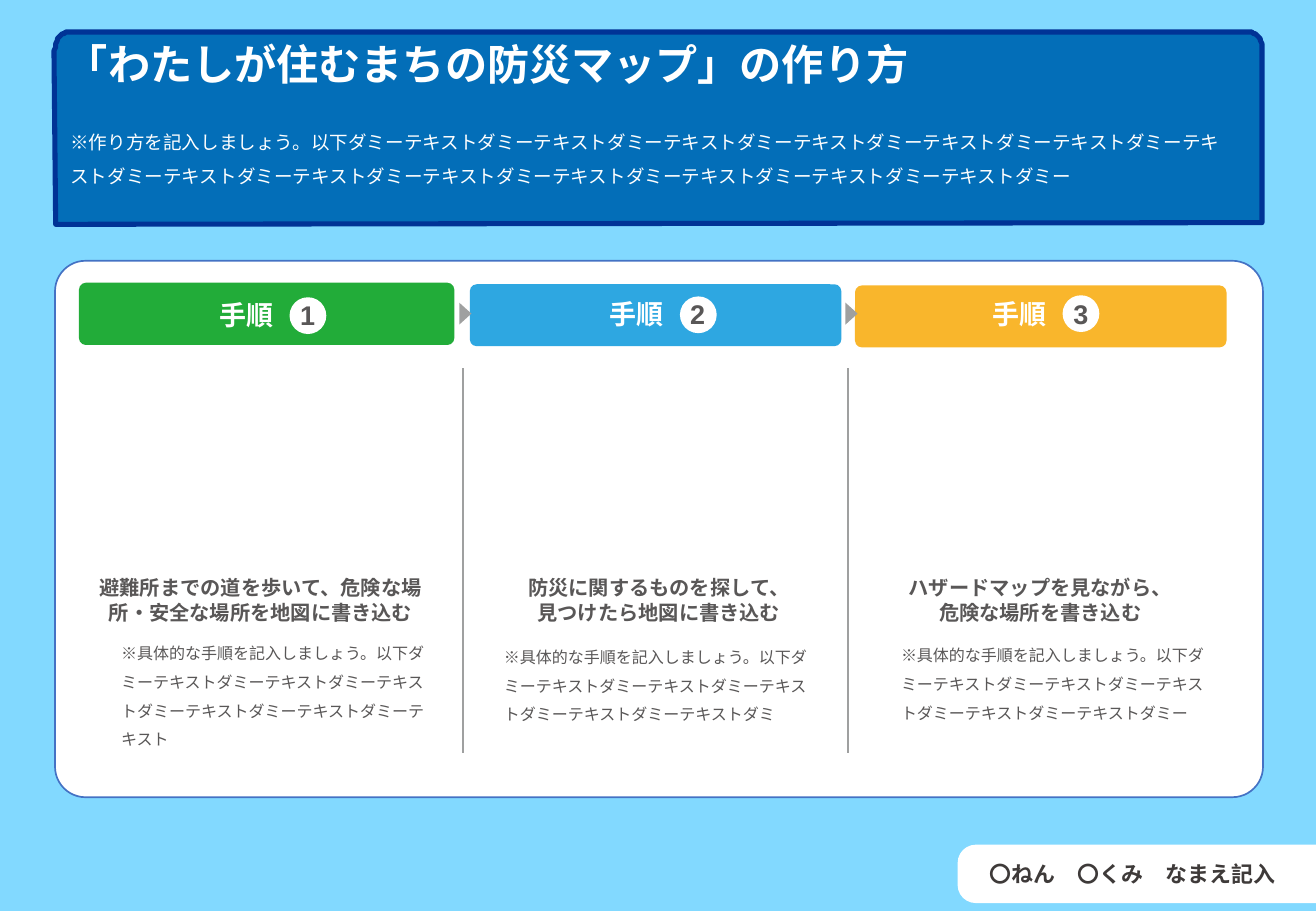
from math import cos, pi, sin
from lxml.etree import SubElement
from pptx import Presentation
from pptx.dml.color import RGBColor
from pptx.enum.shapes import MSO_CONNECTOR, MSO_SHAPE
from pptx.enum.text import MSO_ANCHOR, PP_ALIGN
from pptx.oxml.ns import qn
from pptx.util import Pt

# Content
DUMMY = "ダミーテキスト"
TITLE = "「わたしが住むまちの防災マップ」の作り方"
INTRO = "※作り方を記入しましょう。以下" + DUMMY * 14 + "ダミー"
NAME_LINE = "〇ねん　〇くみ　なまえ記入"
STEP_LABEL = "手順　"
STEP_INTRO = "※具体的な手順を記入しましょう。以下"
# Boxes are (left, top, width, height)
STEPS = [
    dict(color="22AC39", bar=(46.8, 167.6, 222.5, 36.9), badge=(171.6, 176.2),
         label=(98.6, 173.5), head=(49, 337.7, 211, 36), body=(64.8, 372.2),
         heading="避難所までの道を歩いて、危険な場所・安全な場所を地図に書き込む",
         detail=STEP_INTRO + DUMMY * 6),
    dict(color="2EA7E1", bar=(278.5, 168.5, 220.2, 36.7), badge=(403, 175.7),
         label=(329.8, 172.6), head=(304.6, 337.7, 172, 36), body=(291.6, 374.4),
         heading="防災に関するものを探して、見つけたら地図に書き込む",
         detail=STEP_INTRO + DUMMY * 5 + "ダミ"),
    dict(color="F9B62C", bar=(506.8, 169.2, 220.2, 36.7), badge=(629.8, 175),
         label=(557, 172.6), head=(530.6, 337.7, 172, 36), body=(527, 373.7),
         heading="ハザードマップを見ながら、危険な場所を書き込む",
         detail=STEP_INTRO + DUMMY * 5 + "ダミー"),
]
DIVIDERS = [274.4, 502.6]
ARROWS = [269.3, 498.2]

THEME = dict(
    font="Arial", sky="82D9FF", banner="036EB8", navy="003396", white="FFFFFF",
    border="4472C4", gray="9FA0A0", text="595757", dark="3E3A39",
    title=25, step=16, name=13, heading=12, intro=11, detail=9.5,
)


def rgb(name):
    return RGBColor.from_string(THEME.get(name, name))


def paint(sp, fill, line=None, width=1):
    sp.shadow.inherit = False
    sp.fill.solid()
    sp.fill.fore_color.rgb = rgb(fill)
    if line:
        sp.line.color.rgb = rgb(line)
        sp.line.width = Pt(width)
    else:
        sp.line.fill.background()


def add_shape(s, kind, box, fill, adj=(), rotation=0, **outline):
    sp = s.shapes.add_shape(kind, *map(Pt, box))
    for i, value in enumerate(adj):
        sp.adjustments[i] = value
    sp.rotation = rotation
    paint(sp, fill, **outline)


def write(tf, runs, size, bold=False, **layout):
    tf.word_wrap = True
    p = tf.paragraphs[0]
    for key, value in ({"alignment": PP_ALIGN.LEFT} | layout).items():
        setattr(p, key, value)
    for text, color in runs:
        r = p.add_run()
        r.text = text
        fmt = dict(name=THEME["font"], size=Pt(THEME[size]), bold=bold)
        for key, value in fmt.items():
            setattr(r.font, key, value)
        r.font.color.rgb = rgb(color)


def add_text(s, box, runs, size, anchor=MSO_ANCHOR.TOP, **layout):
    tf = s.shapes.add_textbox(*map(Pt, box)).text_frame
    tf.vertical_anchor = anchor
    write(tf, runs, size, **layout)


def add_banner(s):
    left, right, top, rx, ry, n = 32.4, 748.5, 19.4, 6.5, 12.2, 10
    turns = [pi / 2 * i / n for i in range(n + 1)]
    pts = [(left + rx * (1 - cos(a)), top + ry * (1 - sin(a))) for a in turns]
    pts += [(right - rx * (1 - sin(a)), top + ry * (1 - cos(a))) for a in turns]
    pts += [(748, 132), (33, 133)]
    fb = s.shapes.build_freeform(*pts[0], scale=Pt(1))
    fb.add_line_segments(pts[1:], close=True)
    sp = fb.convert_to_shape()
    paint(sp, "banner", "navy", 3)
    sp.text_frame.vertical_anchor = MSO_ANCHOR.TOP
    write(sp.text_frame, [(TITLE, "white")], "title", bold=True)


def main():
    prs = Presentation()
    prs.slide_width, prs.slide_height = Pt(780), Pt(540)
    s = prs.slides.add_slide(prs.slide_layouts[6])
    s.background.fill.solid()
    s.background.fill.fore_color.rgb = rgb("sky")

    # Title banner
    add_banner(s)
    add_text(s, (34.6, 67.7, 702, 45.4), [(INTRO, "white")], "intro",
             line_spacing=1.5)

    # Name tab
    add_shape(s, MSO_SHAPE.ROUND_2_SAME_RECTANGLE, (656.5, 411.8, 34.6, 212.4),
              "white", adj=(0.31, 0), rotation=270)
    add_text(s, (579.6, 507.6, 200.4, 21), [(NAME_LINE, "dark")], "name",
             anchor=MSO_ANCHOR.MIDDLE, bold=True)

    # Panel
    add_shape(s, MSO_SHAPE.ROUNDED_RECTANGLE, (32.6, 154.6, 716, 318), "white",
              adj=(0.057,), line="border")

    # Steps
    for number, step in enumerate(STEPS, 1):
        add_shape(s, MSO_SHAPE.ROUNDED_RECTANGLE, step["bar"], step["color"],
                  adj=(0.111,))
        add_shape(s, MSO_SHAPE.OVAL, (*step["badge"], 21.8, 21.8), "white")
        add_text(s, (*step["label"], 119.5, 26.6),
                 [(STEP_LABEL, "white"), (str(number), "text")], "step",
                 bold=True, alignment=PP_ALIGN.CENTER)
        add_text(s, step["head"], [(step["heading"], "text")], "heading",
                 bold=True, alignment=PP_ALIGN.CENTER)
        add_text(s, (*step["body"], 196.6, 57.6), [(step["detail"], "text")],
                 "detail", line_spacing=1.5)

    # Arrows and dividers between steps
    for arrow, x in zip(ARROWS, DIVIDERS):
        add_shape(s, MSO_SHAPE.ISOSCELES_TRIANGLE, (arrow, 182.3, 13, 7.2),
                  "gray", rotation=90)
        line = s.shapes.add_connector(MSO_CONNECTOR.STRAIGHT, Pt(x), Pt(218.2),
                                      Pt(x), Pt(446.4))
        line.line.color.rgb = rgb("gray")
        line.line.width = Pt(0.75)
        SubElement(line._element.spPr, qn("a:effectLst"))

    prs.save("out.pptx")


if __name__ == "__main__":
    main()
